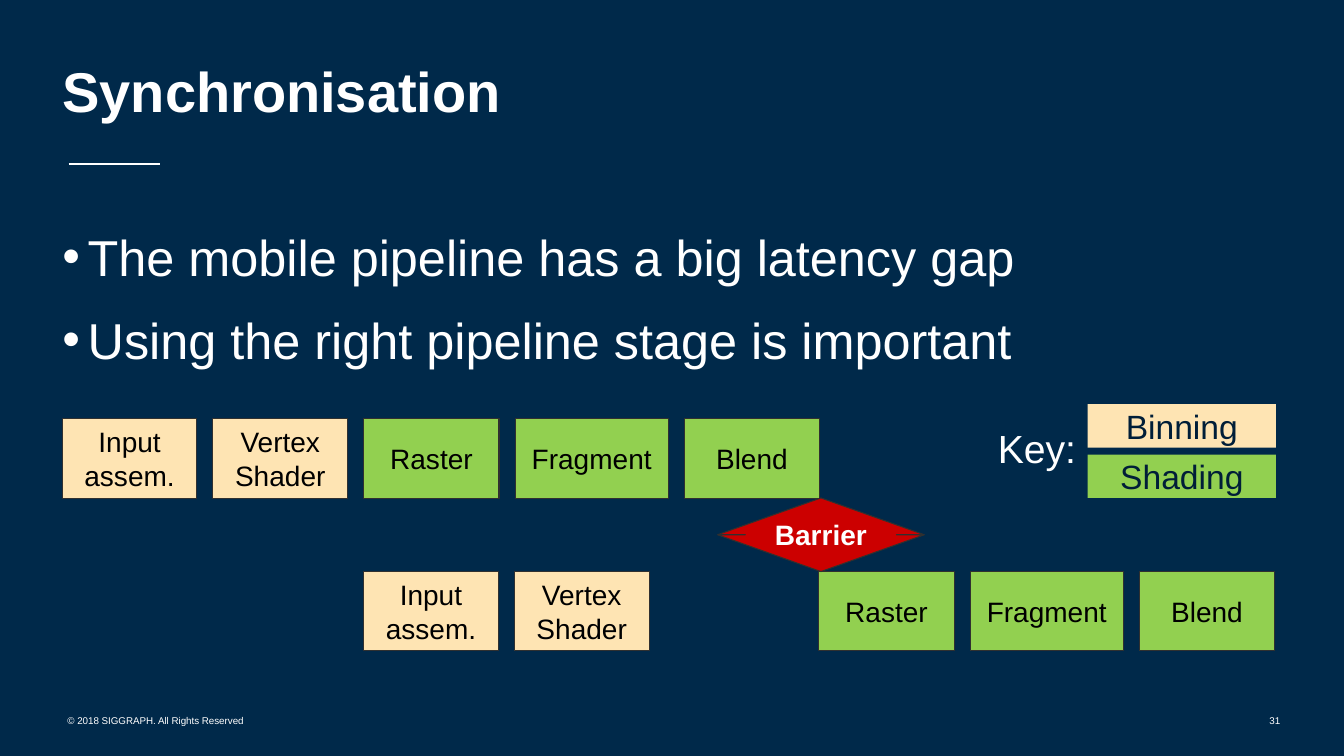
from lxml import etree
from pptx import Presentation
from pptx.dml.color import RGBColor
from pptx.enum.shapes import MSO_CONNECTOR, MSO_SHAPE
from pptx.enum.text import MSO_ANCHOR, MSO_AUTO_SIZE, PP_ALIGN
from pptx.oxml.ns import qn
from pptx.util import Pt

LEFT, CENTER, RIGHT = PP_ALIGN.LEFT, PP_ALIGN.CENTER, PP_ALIGN.RIGHT
TOP, MIDDLE = MSO_ANCHOR.TOP, MSO_ANCHOR.MIDDLE
RECTANGLE, DOUBLE_ARROW = MSO_SHAPE.RECTANGLE, MSO_SHAPE.UP_DOWN_ARROW
STRAIGHT = MSO_CONNECTOR.STRAIGHT
NO_AUTOFIT = MSO_AUTO_SIZE.NONE

FONT = "Arial"
COLORS = {
    "background": "00294A",
    "white": "FFFFFF",
    "black": "000000",
    "key text": "001E38",
    "outline": "303030",
    "binning": "FEE4B3",
    "shading": "92D050",
    "barrier": "CC0000",
}

# Label and width of each pipeline stage
BINNING_STAGES = [("Input assem.", 95.8), ("Vertex Shader", 96.5)]
SHADING_STAGES = [("Raster", 96.5), ("Fragment", 109.4), ("Blend", 96.5)]
STAGE_HEIGHT = 56.6
STAGE_GAP = 11.5
FIRST_ROW, SECOND_ROW = 299.2, 408.2


def color(name):
    return RGBColor.from_string(COLORS[name])


def place(shape, left, top, width, height):
    shape.left, shape.top = Pt(left), Pt(top)
    shape.width, shape.height = Pt(width), Pt(height)


def write(paragraph, text, size, text_color, align=LEFT, bold=False):
    paragraph.alignment = align
    run = paragraph.add_run()
    run.text = text
    run.font.name = FONT
    run.font.size = Pt(size)
    run.font.bold = bold
    run.font.color.rgb = color(text_color)


def set_bullet(paragraph, indent):
    properties = paragraph._p.get_or_add_pPr()
    properties.set("marL", str(Pt(indent)))
    properties.set("indent", str(-Pt(indent)))
    etree.SubElement(properties, qn("a:buChar")).set("char", "•")


def add_title(slide, text):
    title = slide.shapes.title
    place(title, 37.4, 36, 464.4, 62.6)
    title.text_frame.auto_size = NO_AUTOFIT
    title.text_frame.vertical_anchor = MIDDLE
    paragraph = title.text_frame.paragraphs[0]
    paragraph.line_spacing = 0.9
    write(paragraph, text, 40, "white", bold=True)


def add_bullets(slide, items):
    body = slide.placeholders[1]
    place(body, 37.4, 157.7, 874.1, 303.8)
    frame = body.text_frame
    frame.auto_size = NO_AUTOFIT
    frame.vertical_anchor = TOP
    for index, item in enumerate(items):
        paragraph = frame.add_paragraph() if index else frame.paragraphs[0]
        set_bullet(paragraph, 18)
        paragraph.space_before = Pt(10 if index else 0)
        paragraph.space_after = Pt(6)
        write(paragraph, item, 36, "white")


def add_label(slide, box, text, size, align=LEFT, anchor=MIDDLE, margin_left=7.2):
    label = slide.shapes.add_textbox(*map(Pt, box))
    frame = label.text_frame
    frame.word_wrap = True
    frame.vertical_anchor = anchor
    frame.margin_left = Pt(margin_left)
    write(frame.paragraphs[0], text, size, "white", align)


def add_block(slide, kind, box, text, size, fill, text_color, outlined=True, bold=False):
    block = slide.shapes.add_shape(kind, *map(Pt, box))
    block.shadow.inherit = False
    block.fill.solid()
    block.fill.fore_color.rgb = color(fill)
    frame = block.text_frame
    frame.word_wrap = True
    frame.vertical_anchor = MIDDLE
    if outlined:
        block.line.color.rgb = color("outline")
        block.line.width = Pt(0.75)
        frame.margin_left = frame.margin_right = Pt(7.2)
        frame.margin_top = frame.margin_bottom = Pt(7.2)
    else:
        block.line.fill.background()
    write(frame.paragraphs[0], text, size, text_color, CENTER, bold)
    return block


def add_stages(slide, stages, phase, left, top):
    """Draw one phase from left to right and return where the next stage starts."""
    for name, width in stages:
        box = (left, top, width, STAGE_HEIGHT)
        add_block(slide, RECTANGLE, box, name, 20, phase, "black")
        left += width + STAGE_GAP
    return left


def add_barrier(slide):
    box = (512.6, 355.7, 147.6, 52.6)
    barrier = add_block(slide, DOUBLE_ARROW, box, "Barrier", 20,
                        "barrier", "white", bold=True)
    # Head length comes first for this shape, then shaft width
    barrier.adjustments[0] = 0.21
    barrier.adjustments[1] = 0.73


def add_key(slide):
    add_label(slide, (705.6, 299.5, 71.3, 41), "Key:", 28, anchor=TOP)
    for index, (name, phase) in enumerate([("Binning", "binning"), ("Shading", "shading")]):
        box = (776.9, 288.7 + 36 * index, 134.6, 31)
        add_block(slide, RECTANGLE, box, name, 24, phase, "key text", outlined=False)


def add_title_rule(slide):
    rule = slide.shapes.add_connector(STRAIGHT, Pt(49), Pt(117.2), Pt(114.5), Pt(117.2))
    rule.line.color.rgb = color("white")
    rule.line.width = Pt(1)
    etree.SubElement(rule._element.spPr, qn("a:effectLst"))


def main():
    presentation = Presentation()
    presentation.slide_width, presentation.slide_height = Pt(960), Pt(540)
    slide = presentation.slides.add_slide(presentation.slide_layouts[1])
    slide.background.fill.solid()
    slide.background.fill.fore_color.rgb = color("background")

    add_title_rule(slide)
    add_title(slide, "Synchronisation")
    add_bullets(slide, [
        "The mobile pipeline has a big latency gap",
        "Using the right pipeline stage is important",
    ])
    add_label(slide, (38.2, 501.1, 324, 26.6),
              "© 2018 SIGGRAPH. All Rights Reserved", 7, margin_left=10)
    add_label(slide, (705.6, 500.4, 216, 28.8), "31", 7, RIGHT)

    first_shading = add_stages(slide, BINNING_STAGES, "binning", 44.7, FIRST_ROW)
    add_stages(slide, SHADING_STAGES, "shading", first_shading, FIRST_ROW)
    add_stages(slide, BINNING_STAGES, "binning", first_shading, SECOND_ROW)
    add_stages(slide, SHADING_STAGES, "shading", 585, SECOND_ROW)
    add_barrier(slide)
    add_key(slide)
    presentation.save("out.pptx")


if __name__ == "__main__":
    main()
